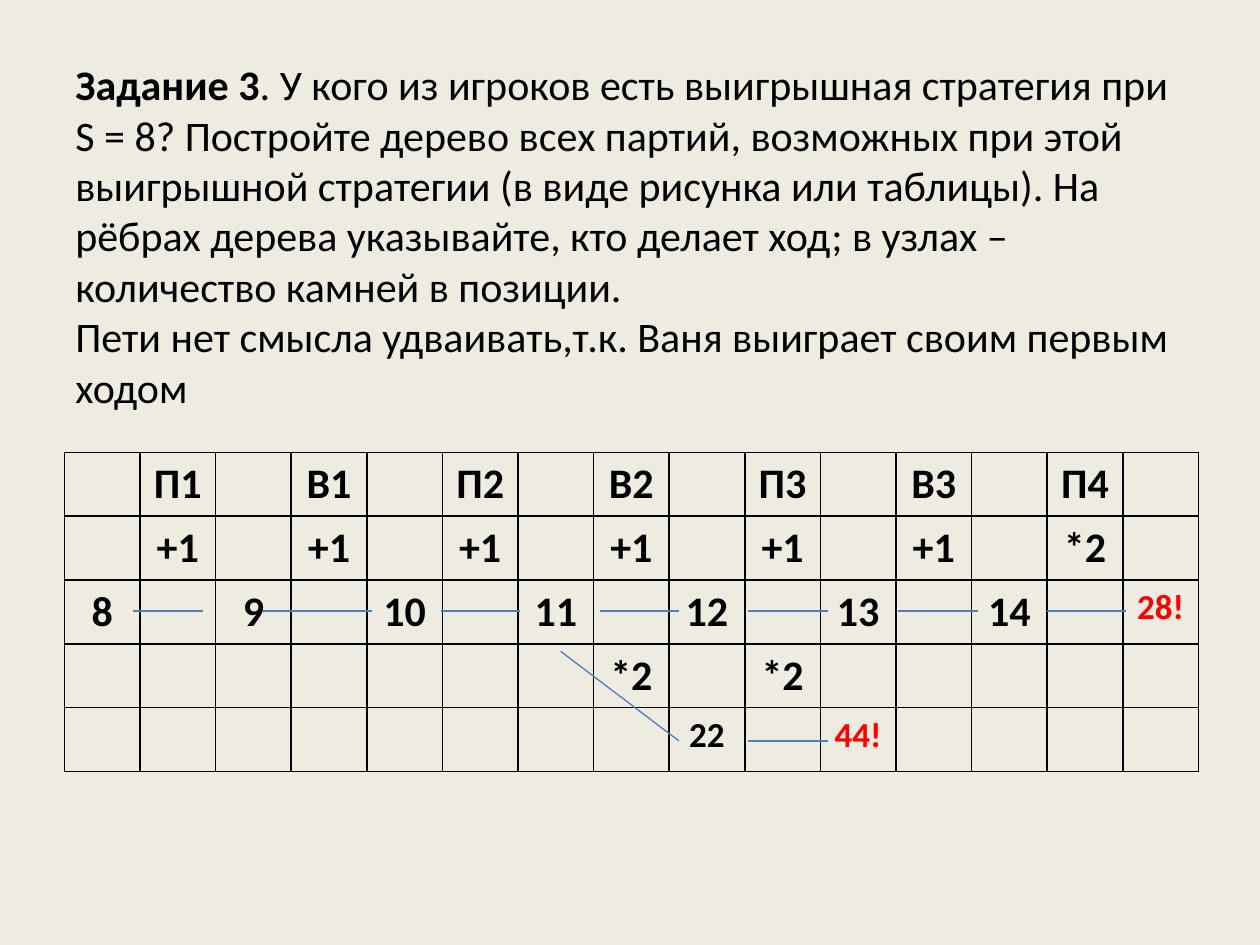
from lxml.etree import SubElement
from pptx import Presentation
from pptx.dml.color import RGBColor
from pptx.enum.shapes import MSO_CONNECTOR
from pptx.enum.text import MSO_ANCHOR, PP_ALIGN
from pptx.oxml import parse_xml
from pptx.oxml.ns import nsdecls, qn
from pptx.util import Pt

BLACK = RGBColor(0, 0, 0)
RED = RGBColor(0xFF, 0, 0)
BLUE = RGBColor(0x4B, 0x7E, 0xBC)
CREAM = RGBColor(0xEE, 0xEC, 0xE1)

COLS, ROWS = 15, 5
LABELS = ["П1", "В1", "П2", "В2", "П3", "В3", "П4"]
MOVES = ["+1"] * 6 + ["*2"]
STONES = ["8", "9", "10", "11", "12", "13", "14", "28!"]
TREE = {(0, 2 * i + 1): name for i, name in enumerate(LABELS)}
TREE |= {(1, 2 * i + 1): move for i, move in enumerate(MOVES)}
TREE |= {(2, 2 * i): count for i, count in enumerate(STONES)}
TREE |= {(3, 7): "*2", (3, 9): "*2", (4, 8): "22", (4, 10): "44!"}
SMALL = ("22", "28!", "44!")

SPANS = [(76.3, 116), (150.5, 212.4), (252, 297.4), (342.7, 388),
         (427.7, 473), (513.4, 558.7), (598.3, 643.7)]
LINES = [(left, 349.2, right, 349.2) for left, right in SPANS]
LINES += [(427.7, 423.4, 473, 423.4), (320.4, 372.2, 388, 423.4)]

TASK = [
    [("Задание 3", True),
     (". У кого из игроков есть выигрышная стратегия при S = 8? "
      "Постройте дерево всех партий, возможных при этой выигрышной "
      "стратегии (в виде рисунка или таблицы). На рёбрах дерева "
      "указывайте, кто делает ход; в узлах – количество камней "
      "в позиции.", False)],
    [("Пети нет смысла удваивать,т.к. Ваня выиграет своим первым ходом",
      False)],
]


def add_run(para, text, size=24, color=BLACK, bold=True):
    run = para.add_run()
    run.text = text
    font = run.font
    font.name = "Calibri"
    font.size = Pt(size)
    font.bold = bold
    font.color.rgb = color


def add_task(slide, left, top, width, height):
    box = slide.shapes.add_textbox(Pt(left), Pt(top), Pt(width), Pt(height))
    frame = box.text_frame
    frame.word_wrap = True
    frame.vertical_anchor = MSO_ANCHOR.MIDDLE
    para = frame.paragraphs[0]
    for i, parts in enumerate(TASK):
        if i:
            para.add_line_break()
        for text, bold in parts:
            add_run(para, text, bold=bold)


def add_edges(cell):
    props = cell._tc.get_or_add_tcPr()
    for i, side in enumerate(("lnL", "lnR", "lnT", "lnB")):
        props.insert(i, parse_xml(
            f'<a:{side} {nsdecls("a")} w="{Pt(1)}"><a:solidFill>'
            f'<a:srgbClr val="{BLACK}"/></a:solidFill></a:{side}>'))


def add_tree(slide, left, top, width, height):
    shape = slide.shapes.add_table(
        ROWS, COLS, Pt(left), Pt(top), Pt(width), Pt(height))
    table = shape.table
    table.first_row = False
    table.horz_banding = False
    for col in table.columns:
        col.width = Pt(width / COLS)
    for row in table.rows:
        row.height = Pt(height / ROWS)
    for row in range(ROWS):
        for col in range(COLS):
            cell = table.cell(row, col)
            cell.fill.background()
            cell.margin_left = cell.margin_right = Pt(3)
            add_edges(cell)
            text = TREE.get((row, col))
            if text:
                para = cell.text_frame.paragraphs[0]
                para.alignment = PP_ALIGN.CENTER
                add_run(para, text, 20 if text in SMALL else 24,
                        RED if text.endswith("!") else BLACK)


def add_lines(slide):
    for ends in LINES:
        line = slide.shapes.add_connector(
            MSO_CONNECTOR.STRAIGHT, *[Pt(end) for end in ends])
        line.line.color.rgb = BLUE
        line.line.width = Pt(0.75)
        SubElement(line._element.spPr, qn("a:effectLst"))


def main():
    deck = Presentation()
    deck.slide_width, deck.slide_height = Pt(720), Pt(540)
    slide = deck.slides.add_slide(deck.slide_layouts[6])
    fill = slide.background.fill
    fill.solid()
    fill.fore_color.rgb = CREAM
    add_task(slide, 36, 21.6, 648, 225.4)
    add_tree(slide, 36.8, 258.5, 648, 182.5)
    add_lines(slide)
    deck.save("out.pptx")


if __name__ == "__main__":
    main()
